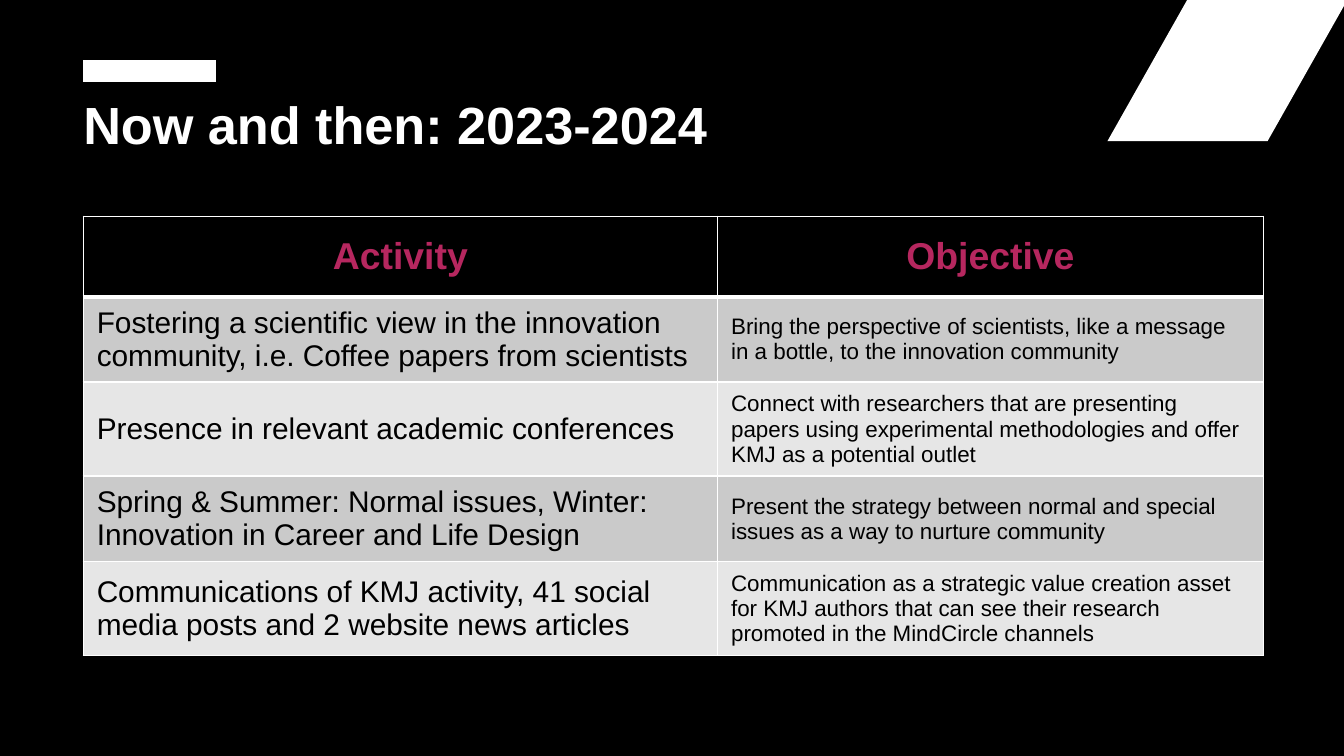
from lxml import etree
from pptx import Presentation
from pptx.dml.color import RGBColor
from pptx.enum.shapes import MSO_CONNECTOR, MSO_SHAPE
from pptx.enum.text import MSO_ANCHOR, PP_ALIGN
from pptx.oxml.ns import qn
from pptx.util import Inches, Pt

STRAIGHT = MSO_CONNECTOR.STRAIGHT
PARALLELOGRAM = MSO_SHAPE.PARALLELOGRAM
TOP, MIDDLE = MSO_ANCHOR.TOP, MSO_ANCHOR.MIDDLE
LEFT, CENTER = PP_ALIGN.LEFT, PP_ALIGN.CENTER

BLACK = RGBColor(0x00, 0x00, 0x00)
WHITE = RGBColor(0xFF, 0xFF, 0xFF)
MAGENTA = RGBColor(0xB6, 0x27, 0x5F)
BANDS = RGBColor(0xCA, 0xCA, 0xCA), RGBColor(0xE6, 0xE6, 0xE6)

FONT = "Arial"
COL_WIDTHS = 4.72, 4.06
ROW_HEIGHTS = 0.6, 0.6, 0.63, 0.63, 0.63
BODY_SIZES = 16, 12
HEADER_BORDERS = {"L": 1, "R": 1, "T": 1, "B": 3}
ROWS = [
    ("Activity", "Objective"),
    ("Fostering a scientific view in the innovation community, i.e. Coffee papers from scientists",
     "Bring the perspective of scientists, like a message in a bottle, to the innovation community"),
    ("Presence in relevant academic conferences",
     "Connect with researchers that are presenting papers using experimental methodologies "
     "and offer KMJ as a potential outlet"),
    ("Spring & Summer: Normal issues, Winter: Innovation in Career and Life Design",
     "Present the strategy between normal and special issues as a way to nurture community"),
    ("Communications of KMJ activity, 41 social media posts and 2 website news articles",
     "Communication as a strategic value creation asset for KMJ authors that can see their "
     "research promoted in the MindCircle channels"),
]


def write_text(tf, text, size, color=BLACK, bold=False, align=LEFT, spacing=None):
    """Put one formatted paragraph into a text frame."""
    p = tf.paragraphs[0]
    p.alignment = align
    p.line_spacing = spacing
    r = p.add_run()
    r.text = text
    r.font.name = FONT
    r.font.size = Pt(size)
    r.font.bold = bold
    r.font.color.rgb = color


def add_corner(s, x, y, w, h):
    """Draw the slanted white block in the box."""
    sp = s.shapes.add_shape(PARALLELOGRAM, Inches(x), Inches(y), Inches(w), Inches(h))
    sp.shadow.inherit = False
    sp.adjustments[0] = 0.565
    sp.fill.solid()
    sp.fill.fore_color.rgb = WHITE
    sp.line.fill.background()


def add_heading(s, x, y, w, h, text):
    """Place the accent bar on top of the box and the title below it."""
    bar = s.shapes.add_connector(STRAIGHT, Inches(x), Inches(y), Inches(x + 0.99), Inches(y))
    bar.line.width = Pt(12)
    bar.line.color.rgb = WHITE
    etree.SubElement(bar._element.spPr, qn("a:effectLst"))
    title = s.shapes.add_textbox(Inches(x), Inches(y + 0.2), Inches(w), Inches(h - 0.2))
    tf = title.text_frame
    tf.word_wrap = True
    tf.margin_left = 0
    tf.vertical_anchor = TOP
    write_text(tf, text, 28, color=WHITE, bold=True, spacing=0.8)


def set_header_borders(cell):
    """Give a header cell white borders, thicker below."""
    tc_pr = cell._tc.get_or_add_tcPr()
    for side, width in HEADER_BORDERS.items():
        ln = etree.SubElement(tc_pr, qn(f"a:ln{side}"), w=str(Pt(width)))
        fill = etree.SubElement(ln, qn("a:solidFill"))
        etree.SubElement(fill, qn("a:srgbClr"), val=str(WHITE))


def add_activity_table(s, x, y, w, h):
    """Fill the box with the table of activities and objectives."""
    table = s.shapes.add_table(len(ROWS), len(COL_WIDTHS), Inches(x), Inches(y),
                               Inches(w), Inches(h)).table
    for col, width in zip(table.columns, COL_WIDTHS):
        col.width = Inches(width)
    for i, (texts, height) in enumerate(zip(ROWS, ROW_HEIGHTS)):
        table.rows[i].height = Inches(height)
        for j, text in enumerate(texts):
            cell = table.cell(i, j)
            cell.vertical_anchor = MIDDLE
            if i == 0:
                set_header_borders(cell)
                cell.fill.solid()
                cell.fill.fore_color.rgb = BLACK
                write_text(cell.text_frame, text, 20, color=MAGENTA, bold=True, align=CENTER)
            else:
                cell.fill.solid()
                cell.fill.fore_color.rgb = BANDS[(i - 1) % 2]
                write_text(cell.text_frame, text, BODY_SIZES[j])


def main():
    """Build the slide and save it."""
    prs = Presentation()
    prs.slide_width, prs.slide_height = Inches(10), Inches(5.625)
    s = prs.slides.add_slide(prs.slide_layouts[6])
    s.background.fill.solid()
    s.background.fill.fore_color.rgb = BLACK
    add_corner(s, 8.24, -0.01, 1.79, 1.06)
    add_heading(s, 0.62, 0.53, 6.36, 0.75, "Now and then: 2023-2024")
    add_activity_table(s, 0.62, 1.61, sum(COL_WIDTHS), sum(ROW_HEIGHTS))
    prs.save("out.pptx")


if __name__ == "__main__":
    main()
